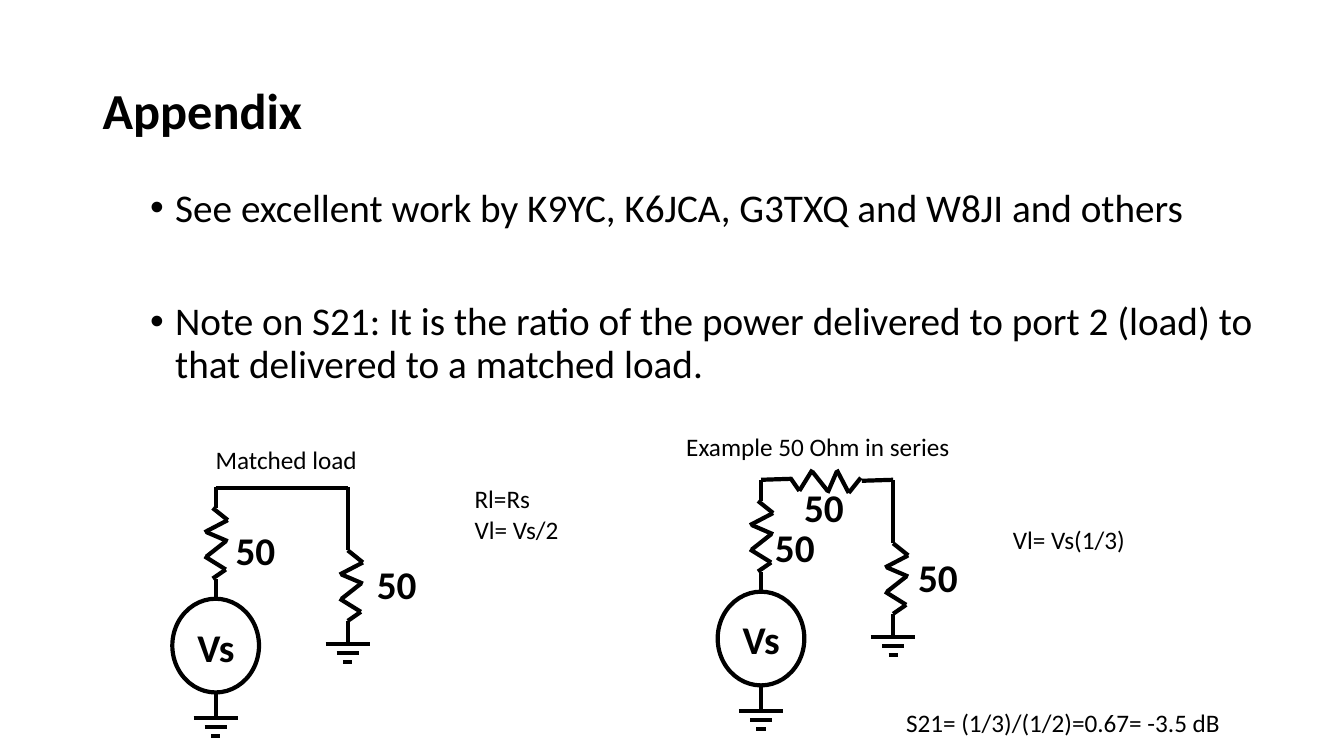
import dataclasses

import lxml.etree
import pptx
import pptx.dml.color
import pptx.enum.shapes
import pptx.enum.text
import pptx.oxml.ns
import pptx.util


@dataclasses.dataclass(frozen=True)
class Theme:
    font: str = "Calibri"
    ink: pptx.dml.color.RGBColor = pptx.dml.color.RGBColor(0, 0, 0)
    paper: pptx.dml.color.RGBColor = pptx.dml.color.RGBColor(255, 255, 255)
    heading: float = 36
    body: float = 28
    caption: float = 18
    stroke: float = 3
    leading: float = 0.9
    bullet_indent: float = 0.25


@dataclasses.dataclass(frozen=True)
class Box:
    left: float
    top: float
    width: float
    height: float

    def within(self, column, row, width, height):
        return Box(self.left + column, self.top + row, width, height)


THEME = Theme()
CELL = 0.1
COLUMNS, ROWS = 133.33, 75
ZIGZAG = [
    ((1.5, 1.2), (0, 0)),
    ((1.5, 1.2), (-0.8, 2.4)),
    ((1.5, 3.3), (-0.6, 2.4)),
    ((1.3, 3.3), (-0.6, 4.8)),
    ((1.3, 6.1), (-0.8, 4.8)),
    ((1.3, 6.1), (0, 7)),
]
GROUND_BARS = [(2.3, 2.2), (3.2, 1.1), (4.1, 0.45)]
SOURCE_AXIS, LOAD_AXIS = 4.3, 17.4


def cells(count):
    return pptx.util.Inches(count * CELL)


def add_text(slide, box, lines, size, bold=False, wrap=False):
    text_box = slide.shapes.add_textbox(
        cells(box.left), cells(box.top), cells(box.width), cells(box.height))
    frame = text_box.text_frame
    frame.text = "\n".join(lines)
    frame.word_wrap = wrap
    for paragraph in frame.paragraphs:
        paragraph.font.name = THEME.font
        paragraph.font.size = pptx.util.Pt(size)
        paragraph.font.bold = bold
        paragraph.font.color.rgb = THEME.ink
    return frame


def add_wire(slide, box, start, end):
    wire = slide.shapes.add_connector(
        pptx.enum.shapes.MSO_CONNECTOR.STRAIGHT,
        cells(box.left + start[0]), cells(box.top + start[1]),
        cells(box.left + end[0]), cells(box.top + end[1]))
    wire.line.color.rgb = THEME.ink
    wire.line.width = pptx.util.Pt(THEME.stroke)
    lxml.etree.SubElement(wire.element.spPr, pptx.oxml.ns.qn("a:effectLst"))


def add_resistor(slide, box, column, row, horizontal=False):
    def place(point):
        side, along = point
        if horizontal:
            return column - along, row + side
        return column + side, row + along

    for start, end in ZIGZAG:
        add_wire(slide, box, place(start), place(end))


def add_ground(slide, box, column, row):
    add_wire(slide, box, (column, row), (column, row + 2.1))
    for drop, half in GROUND_BARS:
        add_wire(slide, box, (column - half, row + drop), (column + half, row + drop))


def add_label(slide, box, column, row, text):
    add_text(slide, box.within(column, row, 6, 5.7), [text], THEME.body, bold=True)


def add_source(slide, box):
    source = slide.shapes.add_shape(
        pptx.enum.shapes.MSO_SHAPE.OVAL,
        cells(box.left), cells(box.top + 11.1), cells(8.6), cells(9.3))
    source.shadow.inherit = False
    source.fill.background()
    source.line.color.rgb = THEME.ink
    source.line.width = pptx.util.Pt(THEME.stroke)
    add_label(slide, box, 1.5, 13, "Vs")


def add_circuit(slide, box):
    add_source(slide, box)
    add_ground(slide, box, SOURCE_AXIS, 20.6)
    add_wire(slide, box, (SOURCE_AXIS, 11.3), (SOURCE_AXIS, 9.1))
    add_resistor(slide, box, SOURCE_AXIS - 0.3, 2.1)
    add_wire(slide, box, (SOURCE_AXIS, 2.1), (SOURCE_AXIS, 0))
    add_wire(slide, box, (LOAD_AXIS, 6.3), (LOAD_AXIS, 0))
    add_resistor(slide, box, LOAD_AXIS, 6.3)
    add_ground(slide, box, LOAD_AXIS, 13.3)


def add_matched_circuit(slide, box):
    add_circuit(slide, box)
    add_wire(slide, box, (SOURCE_AXIS, 0.1), (LOAD_AXIS, 0.1))
    add_label(slide, box, 5.3, 3.4, "50")
    add_label(slide, box, 19.3, 6.8, "50")
    add_text(slide, box.within(3.3, -4.7, 16.2, 4), ["Matched load"], THEME.caption)
    add_text(slide, box.within(29, -0.8, 10.4, 7.1),
             ["Rl=Rs", "Vl= Vs/2"], THEME.caption)


def add_series_circuit(slide, box):
    add_circuit(slide, box)
    add_wire(slide, box, (SOURCE_AXIS, 0), (7.3, -0.1))
    add_resistor(slide, box, 14.2, -0.2, horizontal=True)
    add_wire(slide, box, (14.3, 0.1), (LOAD_AXIS, 0))
    add_label(slide, box, 4.7, 3.8, "50")
    add_label(slide, box, 7.6, -0.1, "50")
    add_label(slide, box, 18.9, 6.8, "50")
    add_text(slide, box.within(-4.1, -5.3, 28.4, 4),
             ["Example 50 Ohm in series"], THEME.caption)
    add_text(slide, box.within(28.3, 3.9, 13.3, 4), ["Vl= Vs(1/3)"], THEME.caption)
    add_text(slide, box.within(17.7, 22.1, 34.2, 4),
             ["S21= (1/3)/(1/2)=0.67= -3.5 dB"], THEME.caption)


def add_title(slide, box):
    frame = add_text(slide, box, ["Appendix"], THEME.heading, bold=True, wrap=True)
    frame.vertical_anchor = pptx.enum.text.MSO_ANCHOR.MIDDLE
    frame.paragraphs[0].line_spacing = THEME.leading


def add_bullets(slide, box):
    frame = add_text(slide, box, [
        "See excellent work by K9YC, K6JCA, G3TXQ and W8JI and others",
        "Note on S21: It is the ratio of the power delivered to port 2 (load) to "
        "that delivered to a matched load.",
    ], THEME.body, wrap=True)
    indent = pptx.util.Inches(THEME.bullet_indent)
    for paragraph, gap in zip(frame.paragraphs, (10, 50.75)):
        paragraph.line_spacing = THEME.leading
        paragraph.space_before = pptx.util.Pt(gap)
        properties = paragraph._p.get_or_add_pPr()
        properties.set("marL", str(indent))
        properties.set("indent", str(-indent))
        bullet_font = lxml.etree.Element(pptx.oxml.ns.qn("a:buFont"), typeface="Arial")
        bullet = lxml.etree.Element(pptx.oxml.ns.qn("a:buChar"), char="•")
        defaults = properties.find(pptx.oxml.ns.qn("a:defRPr"))
        defaults.addprevious(bullet_font)
        defaults.addprevious(bullet)


def main():
    deck = pptx.Presentation()
    deck.slide_width = cells(COLUMNS)
    deck.slide_height = cells(ROWS)
    slide = deck.slides.add_slide(deck.slide_layouts[6])
    slide.background.fill.solid()
    slide.background.fill.fore_color.rgb = THEME.paper
    add_title(slide, Box(9.2, 4, 115, 14.5))
    add_bullets(slide, Box(13.9, 18.2, 115, 47.6))
    add_matched_circuit(slide, Box(17.1, 48.3, 19, 25))
    add_series_circuit(slide, Box(71.2, 47.6, 19, 25))
    deck.save("out.pptx")


if __name__ == "__main__":
    main()
